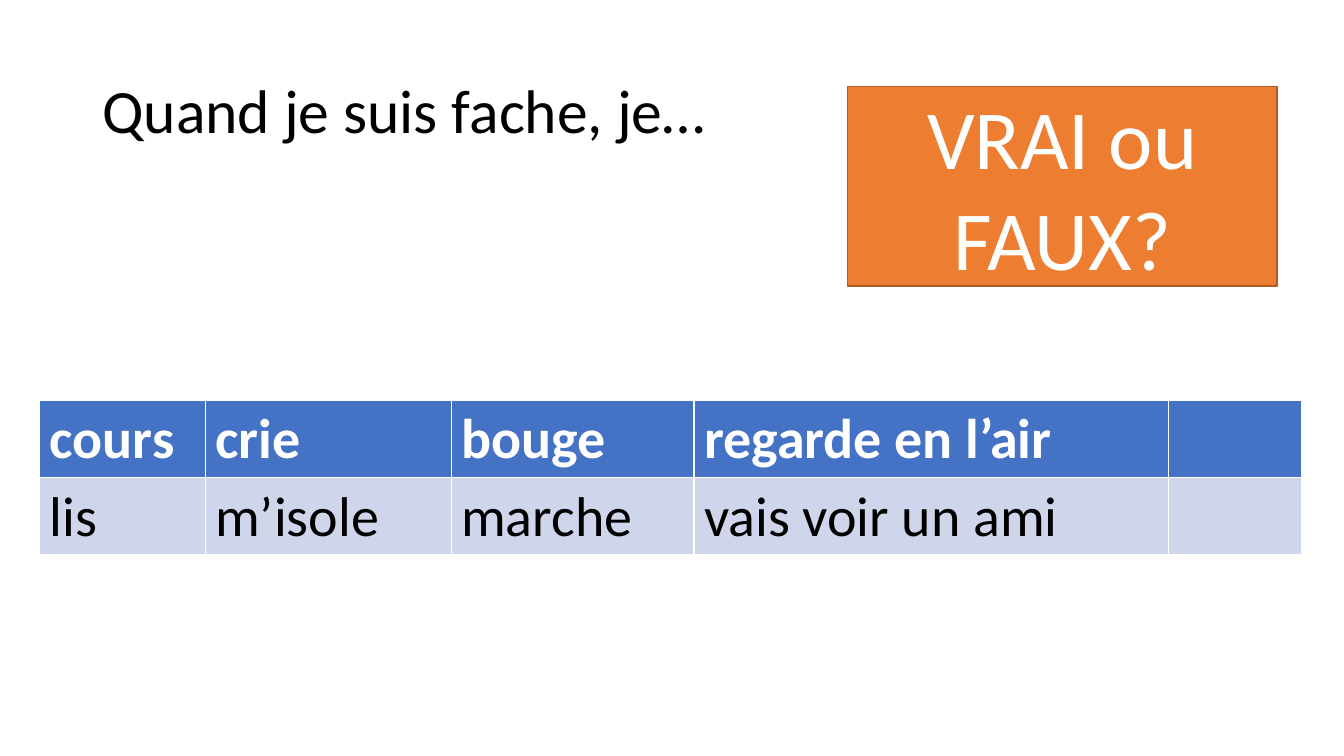
"""Build a French vocabulary slide with a true-or-false prompt and a word table."""
from dataclasses import dataclass

from pptx import Presentation
from pptx import util as u
from pptx.dml.color import RGBColor
from pptx.enum import shapes, text

WHITE = RGBColor(0xFF, 0xFF, 0xFF)
BLACK = RGBColor(0x00, 0x00, 0x00)
BLUE = RGBColor(0x44, 0x72, 0xC4)
PALE_BLUE = RGBColor(0xCF, 0xD5, 0xEA)
ORANGE = RGBColor(0xED, 0x7D, 0x31)
BROWN = RGBColor(0xAF, 0x5C, 0x24)
FONT = "Calibri"


@dataclass(frozen=True)
class WordRow:
    words: tuple[str, ...]
    fill: RGBColor
    color: RGBColor
    bold: bool


COLUMN_WIDTHS = (4.17, 6.2, 6.12, 11.96, 3.35)
ROW_HEIGHT = 1.94
WORD_ROWS = (
    WordRow(("cours", "crie", "bouge", "regarde en l’air", ""), BLUE, WHITE, True),
    WordRow(("lis", "m’isole", "marche", "vais voir un ami", ""), PALE_BLUE, BLACK, False),
)


def write(tf, wording: str, size: int, color: RGBColor, bold: bool = False):
    """Put one formatted paragraph in a text frame and return it."""
    p = tf.paragraphs[0]
    p.text = wording
    p.font.name = FONT
    p.font.size = u.Pt(size)
    p.font.bold = bold
    p.font.color.rgb = color
    return p


def add_title(s) -> None:
    """Add the opening of the sentence."""
    sp = s.shapes.add_textbox(u.Cm(2.33), u.Cm(1.01), u.Cm(29.21), u.Cm(3.68))
    tf = sp.text_frame
    tf.word_wrap = True
    tf.vertical_anchor = text.MSO_ANCHOR.MIDDLE
    write(tf, "Quand je suis fache, je…", 44, BLACK).line_spacing = 0.9


def add_word_table(s) -> None:
    """Add the table of possible sentence endings."""
    table = s.shapes.add_table(
        len(WORD_ROWS), len(COLUMN_WIDTHS), u.Cm(1), u.Cm(10.09),
        u.Cm(sum(COLUMN_WIDTHS)), u.Cm(ROW_HEIGHT * len(WORD_ROWS)),
    ).table
    for column, width in zip(table.columns, COLUMN_WIDTHS):
        column.width = u.Cm(width)
    for row, word_row in zip(table.rows, WORD_ROWS):
        for cell, word in zip(row.cells, word_row.words):
            cell.fill.solid()
            cell.fill.fore_color.rgb = word_row.fill
            write(cell.text_frame, word, 40, word_row.color, word_row.bold)


def add_question(s) -> None:
    """Add the true-or-false box."""
    sp = s.shapes.add_shape(
        shapes.MSO_SHAPE.RECTANGLE, u.Cm(21.36), u.Cm(2.18), u.Cm(10.82), u.Cm(5.03)
    )
    sp.shadow.inherit = False
    sp.fill.solid()
    sp.fill.fore_color.rgb = ORANGE
    sp.line.color.rgb = BROWN
    sp.line.width = u.Pt(1)
    tf = sp.text_frame
    tf.word_wrap = True
    tf.vertical_anchor = text.MSO_ANCHOR.MIDDLE
    write(tf, "VRAI ou FAUX?", 60, WHITE).alignment = text.PP_ALIGN.CENTER


def main() -> None:
    """Build and save the slide."""
    prs = Presentation()
    prs.slide_width, prs.slide_height = u.Cm(33.87), u.Cm(19.05)
    s = prs.slides.add_slide(prs.slide_layouts[6])
    add_title(s)
    add_word_table(s)
    add_question(s)
    prs.save("out.pptx")


if __name__ == "__main__":
    main()
